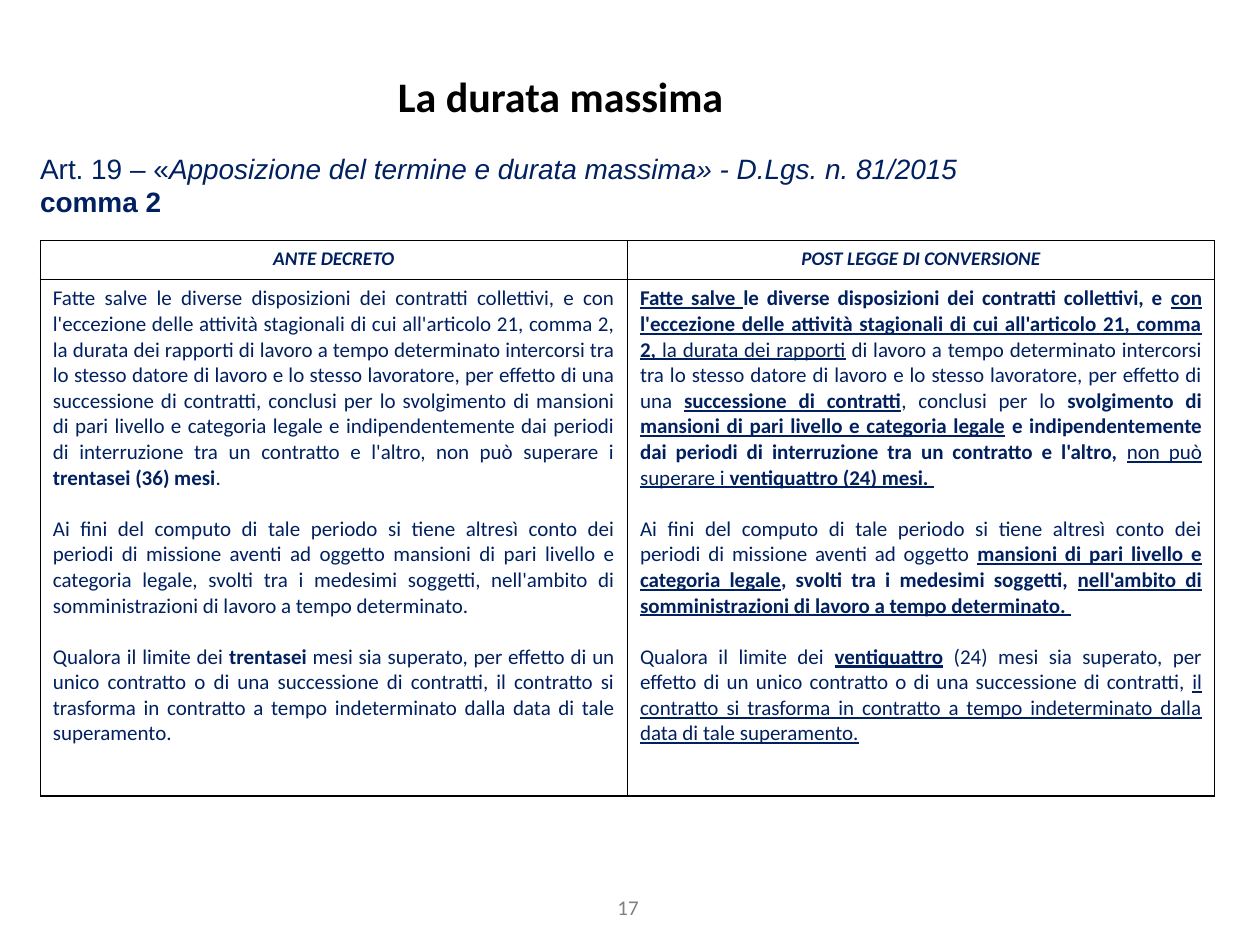
from lxml import etree
from pptx import Presentation
from pptx.dml.color import RGBColor
from pptx.enum import text
from pptx.oxml import ns
from pptx.util import Inches, Pt

NAVY = RGBColor(0x00, 0x20, 0x60)
BLACK = RGBColor(0x00, 0x00, 0x00)
GREY = RGBColor(0x80, 0x80, 0x80)
ALIGN = text.PP_ALIGN

HEADS = ["ANTE DECRETO", "POST LEGGE DI CONVERSIONE"]
ANTE = [
    [("", "Fatte salve le diverse disposizioni dei contratti collettivi, e con l'eccezione delle "
          "attività stagionali di cui all'articolo 21, comma 2, la durata dei rapporti di lavoro a "
          "tempo determinato intercorsi tra lo stesso datore di lavoro e lo stesso lavoratore, per "
          "effetto di una successione di contratti, conclusi per lo svolgimento di mansioni di pari "
          "livello e categoria legale e indipendentemente dai periodi di interruzione tra un "
          "contratto e l'altro, non può superare i "),
     ("b", "trentasei (36) mesi"), ("", ".")],
    [("", "Ai fini del computo di tale periodo si tiene altresì conto dei periodi di missione aventi "
          "ad oggetto mansioni di pari livello e categoria legale, svolti tra i medesimi soggetti, "
          "nell'ambito di somministrazioni di lavoro a tempo determinato.")],
    [("", "Qualora il limite dei "), ("b", "trentasei"),
     ("", " mesi sia superato, per effetto di un unico contratto o di una successione di contratti, "
          "il contratto si trasforma in contratto a tempo indeterminato dalla data di tale "
          "superamento.")],
]
POST = [
    [("bu", "Fatte salve "),
     ("b", "le diverse disposizioni dei contratti collettivi, e "),
     ("bu", "con l'eccezione delle attività stagionali di cui all'articolo 21, comma 2, "),
     ("u", "la durata dei rapporti"),
     ("", " di lavoro a tempo determinato intercorsi tra lo stesso datore di lavoro e lo stesso "
          "lavoratore, per effetto di una "),
     ("bu", "successione di contratti"),
     ("", ", conclusi per lo "),
     ("b", "svolgimento di "),
     ("bu", "mansioni di pari livello e categoria legale"),
     ("b", " e indipendentemente dai periodi di interruzione tra un contratto e l'altro, "),
     ("u", "non può superare i "),
     ("bu", "ventiquattro (24) mesi. ")],
    [("", "Ai fini del computo di tale periodo si tiene altresì conto dei periodi di missione aventi "
          "ad oggetto "),
     ("bu", "mansioni di pari livello e categoria legale"),
     ("b", ", svolti tra i medesimi soggetti, "),
     ("bu", "nell'ambito di somministrazioni di lavoro a tempo determinato. ")],
    [("", "Qualora il limite dei "), ("bu", "ventiquattro"),
     ("", " (24) mesi sia superato, per effetto di un unico contratto o di una successione di "
          "contratti, "),
     ("u", "il contratto si trasforma in contratto a tempo indeterminato dalla data di tale "
           "superamento.")],
]


def place(shape, left, top, width, height):
    shape.left, shape.top = Inches(left), Inches(top)
    shape.width, shape.height = Inches(width), Inches(height)


def write(frame, paras, size, color, align, face="Calibri", gap=0):
    frame.word_wrap = True
    for i, runs in enumerate(paras):
        para = frame.add_paragraph() if i else frame.paragraphs[0]
        para.alignment = align
        para.space_before = Pt(gap if i else 0)
        font = para.font
        font.name, font.size, font.color.rgb = face, Pt(size), color
        for style, words in runs:
            run = para.add_run()
            run.text = words
            run.font.bold = "b" in style
            run.font.italic = "i" in style
            run.font.underline = "u" in style


def add_title(slide, words):
    title = slide.shapes.title
    place(title, 0.67, 0.29, 7.56, 0.94)
    write(title.text_frame, [[("b", words)]], 24, BLACK, ALIGN.CENTER)
    title.text_frame.vertical_anchor = text.MSO_ANCHOR.MIDDLE


def add_box(slide, spot, *style):
    box = slide.shapes.add_textbox(*map(Inches, spot))
    write(box.text_frame, *style)


def edge(cell):
    props = cell._tc.get_or_add_tcPr()
    for side in ("lnL", "lnR", "lnT", "lnB"):
        line = etree.SubElement(props, ns.qn("a:" + side), w=str(Pt(1)))
        fill = etree.SubElement(line, ns.qn("a:solidFill"))
        etree.SubElement(fill, ns.qn("a:srgbClr"), val=str(BLACK))


def add_grid(slide):
    spot = map(Inches, (0.32, 1.91, 9.32, 4.41))
    table = slide.shapes.add_table(2, 2, *spot).table
    table.rows[0].height, table.rows[1].height = Inches(0.31), Inches(4.1)
    for col, (head, body) in enumerate(zip(HEADS, (ANTE, POST))):
        top, main_cell = table.cell(0, col), table.cell(1, col)
        for cell in (top, main_cell):
            edge(cell)
            cell.fill.background()
        write(top.text_frame, [[("bi", head)]], 11, NAVY, ALIGN.CENTER)
        write(main_cell.text_frame, body, 12, NAVY, ALIGN.JUSTIFY, "Calibri", 14.6)


def main():
    deck = Presentation()
    deck.slide_width, deck.slide_height = Inches(10), Inches(7.5)
    slide = deck.slides.add_slide(deck.slide_layouts[5])
    add_title(slide, "La durata massima")
    law = [[("", "Art. 19 – «"),
            ("i", "Apposizione del termine e durata massima» - D.Lgs. n. 81/2015")],
           [("b", "comma 2")]]
    add_box(slide, (0.22, 1.15, 8.49, 0.64), law, 16, NAVY, ALIGN.LEFT, "Arial")
    add_grid(slide)
    add_box(slide, (3.82, 7.05, 2.33, 0.4), [[("", "17")]], 12, GREY, ALIGN.CENTER)
    deck.save("out.pptx")


if __name__ == "__main__":
    main()
